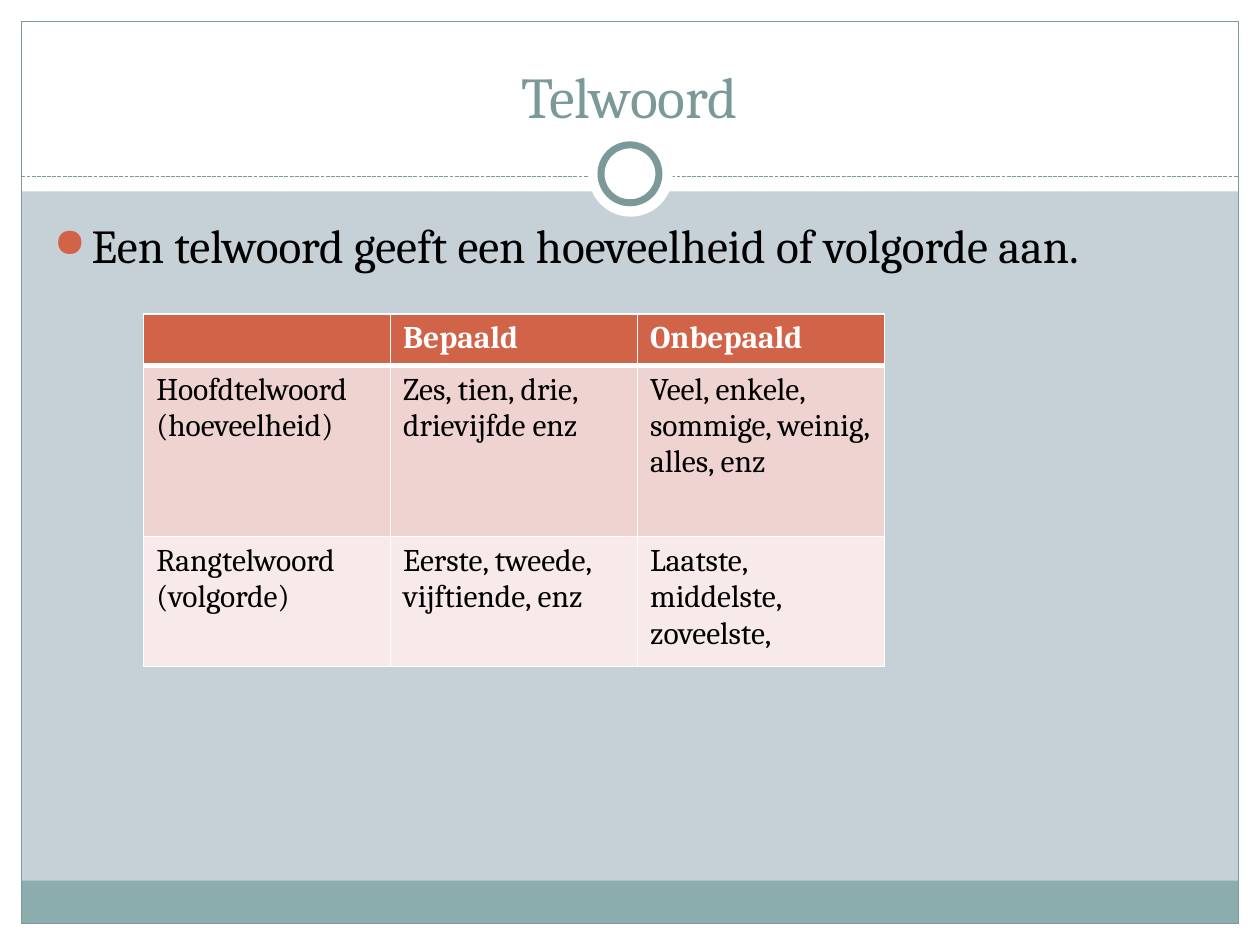
from lxml.etree import SubElement
from pptx import Presentation
from pptx.dml.color import RGBColor
from pptx.enum.dml import MSO_LINE
from pptx.enum.shapes import MSO_CONNECTOR, MSO_SHAPE
from pptx.enum.text import MSO_ANCHOR, MSO_AUTO_SIZE, PP_ALIGN
from pptx.oxml.ns import qn
from pptx.util import Inches, Pt

WHITE = RGBColor(0xFF, 0xFF, 0xFF)
BLACK = RGBColor(0x00, 0x00, 0x00)
BACKGROUND = RGBColor(0xC5, 0xD1, 0xD7)
TEAL = RGBColor(0x7C, 0x99, 0x9A)
FOOTER_TEAL = RGBColor(0x8C, 0xAD, 0xAE)
ORANGE = RGBColor(0xD1, 0x63, 0x49)
ROW_FILLS = [ORANGE, RGBColor(0xEE, 0xD3, 0xD0), RGBColor(0xF7, 0xEA, 0xE9)]

WIDTH, HEIGHT, MARGIN = 10, 7.5, 0.17
BODY_FORMAT = {"size": Pt(27), "color": BLACK}
TITLE_FORMAT = {"size": Pt(33), "color": TEAL}
HEADER_FORMAT = {"size": Pt(18), "color": WHITE, "bold": True}
CELL_FORMAT = {"size": Pt(18), "color": BLACK, "bold": False}

TABLE_ROWS = [
    ["", "Bepaald", "Onbepaald"],
    ["Hoofdtelwoord\n(hoeveelheid)", "Zes, tien, drie, drievijfde enz",
     "Veel, enkele, sommige, weinig, alles, enz"],
    ["Rangtelwoord\n(volgorde)", "Eerste, tweede, vijftiende, enz",
     "Laatste, middelste, zoveelste,"],
]


class SlideBuilder:
    font_name = "Cambria"

    def __init__(self, presentation):
        self.slide = presentation.slides.add_slide(presentation.slide_layouts[5])
        fill = self.slide.background.fill
        fill.solid()
        fill.fore_color.rgb = BACKGROUND

    def format_text(self, text_frame, format_values):
        for paragraph in text_frame.paragraphs:
            for run in paragraph.runs:
                run.font.name = self.font_name
                for name, value in format_values.items():
                    if name == "color":
                        run.font.color.rgb = value
                    else:
                        setattr(run.font, name, value)

    def add_shape(self, kind, left, top, width, height, fill=None, line=None, line_width=0.75):
        shape = self.slide.shapes.add_shape(
            kind, Inches(left), Inches(top), Inches(width), Inches(height))
        shape.shadow.inherit = False
        if fill is None:
            shape.fill.background()
        else:
            shape.fill.solid()
            shape.fill.fore_color.rgb = fill
        if line is None:
            shape.line.fill.background()
        else:
            shape.line.color.rgb = line
            shape.line.width = Pt(line_width)

    def add_dashed_line(self, left, right, top):
        connector = self.slide.shapes.add_connector(
            MSO_CONNECTOR.STRAIGHT, Inches(left), Inches(top), Inches(right), Inches(top))
        connector.line.color.rgb = TEAL
        connector.line.width = Pt(0.75)
        connector.line.dash_style = MSO_LINE.SQUARE_DOT
        SubElement(connector.element.spPr, qn("a:effectLst"))

    def set_title(self, text, left, top, width, height):
        """Fill the title and bring it in front of the decoration."""
        title = self.slide.shapes.title
        title.left, title.top = Inches(left), Inches(top)
        title.width, title.height = Inches(width), Inches(height)
        title.text = text
        frame = title.text_frame
        frame.auto_size = MSO_AUTO_SIZE.NONE
        frame.vertical_anchor = MSO_ANCHOR.BOTTOM
        frame.paragraphs[0].alignment = PP_ALIGN.CENTER
        self.format_text(frame, TITLE_FORMAT)
        self.slide.shapes.element.append(title.element)

    def add_bullet_text(self, text, left, top, width, height):
        frame = self.slide.shapes.add_textbox(
            Inches(left), Inches(top), Inches(width), Inches(height)).text_frame
        frame.word_wrap = True
        frame.text = text
        self.format_text(frame, BODY_FORMAT)
        paragraph = frame.paragraphs[0]
        paragraph.space_before = Pt(5.4)
        properties = paragraph._p.get_or_add_pPr()
        properties.set("marL", str(Inches(0.3)))
        properties.set("indent", str(Inches(-0.3)))
        color = SubElement(properties, qn("a:buClr"))
        SubElement(color, qn("a:srgbClr"), val=str(ORANGE))
        SubElement(properties, qn("a:buSzPct"), val="85000")
        SubElement(properties, qn("a:buChar"), char="●")

    def add_cell_borders(self, cell, widths):
        properties = cell._tc.get_or_add_tcPr()
        for side, width in widths.items():
            border = SubElement(properties, qn(f"a:ln{side}"), w=str(Pt(width)))
            fill = SubElement(border, qn("a:solidFill"))
            SubElement(fill, qn("a:srgbClr"), val=str(WHITE))

    def add_table(self, rows, left, top, column_width, row_heights):
        column_count = len(rows[0])
        table = self.slide.shapes.add_table(
            len(rows), column_count, Inches(left), Inches(top),
            Inches(column_width * column_count), Inches(sum(row_heights))).table
        for column in table.columns:
            column.width = Inches(column_width)
        for row_index, texts in enumerate(rows):
            table.rows[row_index].height = Inches(row_heights[row_index])
            borders = {"L": 1, "R": 1, "T": 3 if row_index == 1 else 1,
                       "B": 3 if row_index == 0 else 1}
            for column_index, text in enumerate(texts):
                cell = table.cell(row_index, column_index)
                cell.text = text
                self.format_text(cell.text_frame, CELL_FORMAT if row_index else HEADER_FORMAT)
                self.add_cell_borders(cell, borders)
                cell.fill.solid()
                cell.fill.fore_color.rgb = ROW_FILLS[row_index]


def main():
    presentation = Presentation()
    presentation.slide_width, presentation.slide_height = Inches(WIDTH), Inches(HEIGHT)
    builder = SlideBuilder(presentation)

    inner_width, inner_height = WIDTH - 2 * MARGIN, HEIGHT - 2 * MARGIN
    white_bands = [
        (0, HEIGHT - MARGIN, WIDTH, MARGIN),
        (0, 0, WIDTH, 1.52),
        (0, 0, MARGIN, HEIGHT),
        (WIDTH - MARGIN, 0, MARGIN, HEIGHT),
    ]
    for band in white_bands:
        builder.add_shape(MSO_SHAPE.RECTANGLE, *band, fill=WHITE)
    builder.add_shape(MSO_SHAPE.RECTANGLE, MARGIN, 6.99, inner_width, 0.34, fill=FOOTER_TEAL)
    builder.add_shape(MSO_SHAPE.RECTANGLE, MARGIN, MARGIN, inner_width, inner_height, line=TEAL)
    builder.add_dashed_line(MARGIN, WIDTH - MARGIN, 1.4)
    builder.add_shape(MSO_SHAPE.OVAL, 4.67, 1.05, 0.67, 0.67, fill=WHITE)
    builder.add_shape(MSO_SHAPE.OVAL, 4.77, 1.15, 0.46, 0.46, fill=WHITE, line=TEAL, line_width=4)

    builder.set_title("Telwoord", 0.33, 0.25, 9.33, 0.83)
    builder.add_bullet_text(
        "Een telwoord geeft een hoeveelheid of volgorde aan.", 0.33, 1.67, 9.3, 5)
    builder.add_table(TABLE_ROWS, 1.14, 2.49, 1.96, [0.41, 1.36, 1.03])
    presentation.save("out.pptx")


if __name__ == "__main__":
    main()
